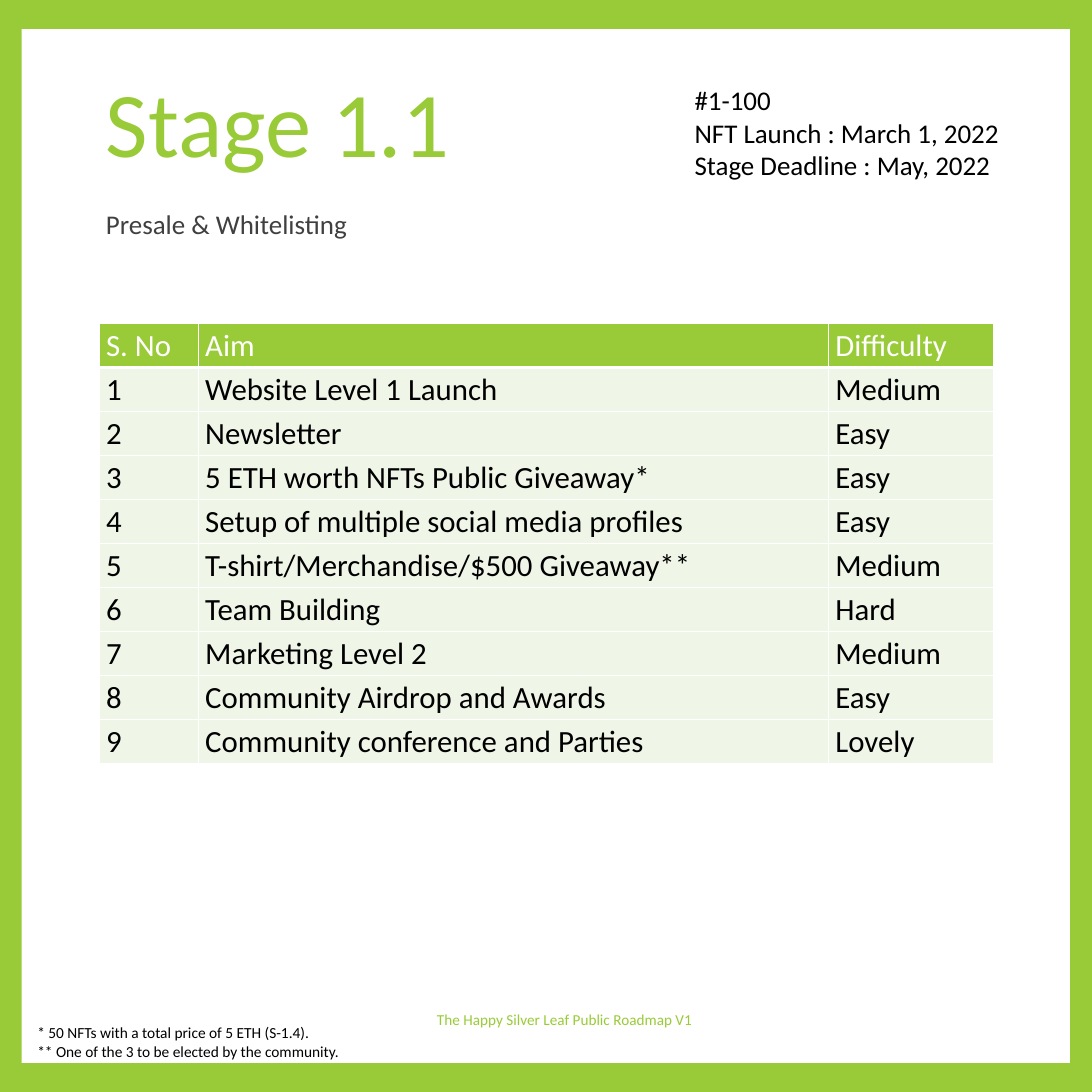
from dataclasses import dataclass

from lxml import etree
from pptx import Presentation
from pptx import util as u
from pptx.dml.color import RGBColor
from pptx.enum import shapes, text
from pptx.oxml import ns


@dataclass(frozen=True)
class Theme:
    font: str = "Calibri"
    green: str = "99CB38"
    pale: str = "EFF6E8"
    white: str = "FFFFFF"
    black: str = "000000"
    grey: str = "404040"
    title: float = 96
    table: float = 32
    body: float = 28
    note: float = 16
    footer: float = 15.8
    rule: float = 1
    header_rule: float = 3


THEME = Theme()
SIDE = u.Inches(15.75)
MARGIN = 9.08
COLUMNS = (9.08, 57.71, 15.11)
ROW = 4.02
HEADER = ("S. No", "Aim", "Difficulty")
AIMS = (
    ("Website Level 1 Launch", "Medium"),
    ("Newsletter", "Easy"),
    ("5 ETH worth NFTs Public Giveaway*", "Easy"),
    ("Setup of multiple social media profiles", "Easy"),
    ("T-shirt/Merchandise/$500 Giveaway**", "Medium"),
    ("Team Building", "Hard"),
    ("Marketing Level 2", "Medium"),
    ("Community Airdrop and Awards", "Easy"),
    ("Community conference and Parties", "Lovely"),
)


def share(percent):
    """Turn a percentage of the slide's side into a length."""
    return u.Emu(round(SIDE * percent / 100))


def paint(fill, colour):
    fill.solid()
    fill.fore_color.rgb = RGBColor.from_string(colour)


def style(para, size, colour):
    para.font.name = THEME.font
    para.font.size = u.Pt(size)
    para.font.color.rgb = RGBColor.from_string(colour)


def add_panel(page, *place):
    panel = page.shapes.add_shape(shapes.MSO_SHAPE.RECTANGLE, *map(share, place))
    panel.shadow.inherit = False
    paint(panel.fill, THEME.white)
    panel.line.fill.background()


def add_text(page, place, lines, size, colour, wrap=True, middle=False):
    box = page.shapes.add_textbox(*map(share, place))
    frame = box.text_frame
    frame.word_wrap = wrap
    if middle:
        frame.vertical_anchor = text.MSO_ANCHOR.MIDDLE
    frame.text = "\n".join(lines)
    for para in frame.paragraphs:
        style(para, size, colour)
    return frame.paragraphs


def set_borders(cell, widths):
    """Draw white rules; widths are points for left, right, top, bottom."""
    properties = cell._tc.get_or_add_tcPr()
    for index, (side, width) in enumerate(zip("LRTB", widths)):
        line = etree.Element(ns.qn(f"a:ln{side}"), w=str(u.Pt(width)))
        fill = etree.SubElement(line, ns.qn("a:solidFill"))
        etree.SubElement(fill, ns.qn("a:srgbClr"), val=THEME.white)
        properties.insert(index, line)


def fill_cell(cell, content, row):
    """Style a cell; row 0 is the header."""
    cell.text = content
    style(cell.text_frame.paragraphs[0], THEME.table,
          THEME.black if row else THEME.white)
    paint(cell.fill, THEME.pale if row else THEME.green)
    top = THEME.header_rule if row == 1 else THEME.rule
    bottom = THEME.rule if row else THEME.header_rule
    set_borders(cell, (THEME.rule, THEME.rule, top, bottom))


def add_aims(page):
    rows = [HEADER]
    rows += [(str(number), *aim) for number, aim in enumerate(AIMS, 1)]
    place = (MARGIN, 29.65, sum(COLUMNS), ROW * len(rows))
    table = page.shapes.add_table(
        len(rows), len(COLUMNS), *map(share, place)).table
    for column, width in zip(table.columns, COLUMNS):
        column.width = share(width)
    for row, contents in enumerate(rows):
        table.rows[row].height = share(ROW)
        for column, content in enumerate(contents):
            fill_cell(table.cell(row, column), content, row)


def main():
    deck = Presentation()
    deck.slide_width = deck.slide_height = SIDE
    page = deck.slides.add_slide(deck.slide_layouts[6])
    paint(page.background.fill, THEME.green)
    add_panel(page, 1.97, 2.67, 96, 94.67)

    title = add_text(page, (MARGIN, 9.9, 68.57, 3.49), ["Stage 1.1"],
                     THEME.title, THEME.green, middle=True)
    title[0].line_spacing = 0.9
    footer = add_text(page, (32.38, 90.73, 38.67, 5.33),
                      ["The Happy Silver Leaf Public Roadmap V1"],
                      THEME.footer, THEME.green, middle=True)
    footer[0].alignment = text.PP_ALIGN.CENTER

    add_aims(page)
    add_text(page, (62.98, 7.37, 30.6, 9.59),
             ["#1-100", "NFT Launch : March 1, 2022", "Stage Deadline : May, 2022"],
             THEME.body, THEME.black)
    add_text(page, (2.79, 93.4, 34.54, 4.06),
             ["* 50 NFTs with a total price of 5 ETH (S-1.4).",
              "** One of the 3 to be elected by the community."],
             THEME.note, THEME.black)
    add_text(page, (MARGIN, 18.67, 23.81, 3.62), ["Presale & Whitelisting"],
             THEME.body, THEME.grey, wrap=False)
    deck.save("out.pptx")


if __name__ == "__main__":
    main()
